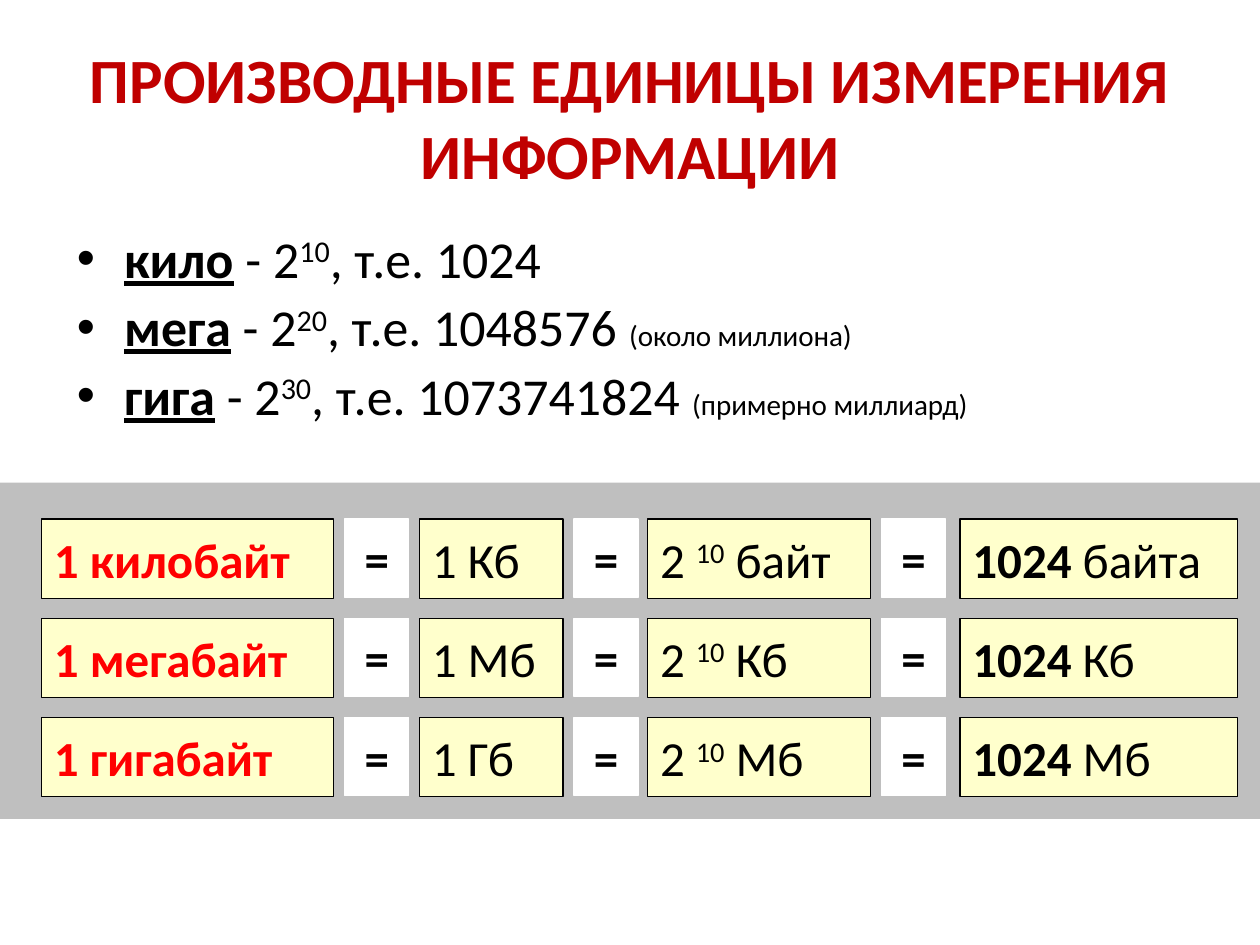
from dataclasses import dataclass

from pptx import Presentation
from pptx.dml.color import RGBColor
from pptx.enum.shapes import MSO_SHAPE
from pptx.enum.text import MSO_ANCHOR as ANCHOR, MSO_AUTO_SIZE as AUTOSIZE, PP_ALIGN as ALIGN
from pptx.util import Inches, Pt

COLS, ROWS = 100, 75


@dataclass(frozen=True)
class Theme:
    font: str = "Calibri"
    heading: str = "C00000"
    ink: str = "000000"
    accent: str = "FF0000"
    band: str = "BFBFBF"
    cell: str = "FFFFCC"
    paper: str = "FFFFFF"
    title_size: float = 36
    body_size: float = 29.6
    note_size: float = 16.6
    cell_size: float = 28
    line: float = 0.75


def add_run(p, text, font, size, color, bold=False, underline=False, raised=False):
    r = p.add_run()
    r.text = text
    r.font.name, r.font.size = font, Pt(size)
    r.font.color.rgb = RGBColor.from_string(color)
    r.font.bold, r.font.underline = bold, underline
    if raised:
        r.font._element.set("baseline", "30000")


class SlideBuilder:
    """Draws on one slide; lengths are columns and rows of a COLS by ROWS grid."""

    def __init__(self, prs, theme):
        self.theme = theme
        self.unit_x, self.unit_y = prs.slide_width / COLS, prs.slide_height / ROWS
        self.slide = prs.slides.add_slide(prs.slide_layouts[1])

    def box(self, x, y, w, h):
        return (round(x * self.unit_x), round(y * self.unit_y),
                round(w * self.unit_x), round(h * self.unit_y))

    def add_runs(self, p, runs, size, color=None):
        """Add (text, format) runs to a paragraph."""
        base = {"font": self.theme.font, "size": size, "color": color or self.theme.ink}
        for text, fmt in runs:
            add_run(p, text, **{**base, **fmt})

    def place(self, sp, *area):
        sp.left, sp.top, sp.width, sp.height = self.box(*area)
        sp.text_frame.auto_size = AUTOSIZE.NONE
        return sp.text_frame

    def title(self, text, *area):
        tf = self.place(self.slide.shapes.title, *area)
        tf.vertical_anchor = ANCHOR.MIDDLE
        p = tf.paragraphs[0]
        p.alignment = ALIGN.CENTER
        self.add_runs(p, [(text, {"bold": True})], self.theme.title_size, self.theme.heading)

    def bullets(self, items, *area):
        tf = self.place(self.slide.placeholders[1], *area)
        for i, runs in enumerate(items):
            p = tf.add_paragraph() if i else tf.paragraphs[0]
            p.line_spacing, p.space_before = 1.1, Pt(0)
            self.add_runs(p, runs, self.theme.body_size)

    def group(self):
        return self.slide.shapes.add_group_shape().shapes

    def rect(self, area, fill, line=None, runs=(), align=ALIGN.LEFT, shapes=None):
        shapes = self.slide.shapes if shapes is None else shapes
        sp = shapes.add_shape(MSO_SHAPE.RECTANGLE, *self.box(*area))
        sp.shadow.inherit = False
        sp.fill.solid()
        sp.fill.fore_color.rgb = RGBColor.from_string(fill)
        if line:
            sp.line.color.rgb = RGBColor.from_string(line)
            sp.line.width = Pt(self.theme.line)
        else:
            sp.line.fill.background()
        if runs:
            tf = sp.text_frame
            tf.word_wrap, tf.vertical_anchor = False, ANCHOR.MIDDLE
            tf.paragraphs[0].alignment = align
            self.add_runs(tf.paragraphs[0], runs, self.theme.cell_size)

    def equation(self, y, terms, columns):
        """One row of boxed terms with an equals sign in each gap."""
        t, shapes = self.theme, self.group()
        for (x, w), runs in zip(columns, terms):
            self.rect((x, y, w, 6.3), t.cell, t.ink, runs, shapes=shapes)
        for x, w in columns[:-1]:
            self.rect((x + w + 0.85, y, 5.1, 6.2), t.paper, t.paper,
                      [("=", {"bold": True})], ALIGN.CENTER, shapes)


PREFIXES = [
    ("кило", "10", "1024", ""),
    ("мега", "20", "1048576 ", "(около миллиона)"),
    ("гига", "30", "1073741824 ", "(примерно миллиард)"),
]
UNITS = [
    ("килобайт", "Кб", "байт", "байта"),
    ("мегабайт", "Мб", "Кб", "Кб"),
    ("гигабайт", "Гб", "Мб", "Мб"),
]
COLUMNS = [(3.3, 23.2), (33.3, 11.4), (51.4, 17.7), (76.2, 22)]
FIRST_ROW, ROW_STEP = 41.2, 7.87


def prefix_runs(name, power, value, note, theme):
    runs = [(name, {"bold": True, "underline": True}), (" - 2", {}),
            (power, {"raised": True}), (f", т.е. {value}", {})]
    return runs + ([(note, {"size": theme.note_size})] if note else [])


def unit_terms(name, short, smaller, counted, theme):
    return [
        [(f"1 {name}", {"bold": True, "color": theme.accent})],
        [(f"1 {short}", {})],
        [("2 ", {}), ("10", {"raised": True}), (f" {smaller}", {})],
        [("1024", {"bold": True}), (f" {counted}", {})],
    ]


def main():
    prs = Presentation()
    prs.slide_width, prs.slide_height = Inches(10), Inches(7.5)
    theme = Theme()
    s = SlideBuilder(prs, theme)
    s.title("ПРОИЗВОДНЫЕ ЕДИНИЦЫ ИЗМЕРЕНИЯ ИНФОРМАЦИИ", 5, 3, 90, 12.5)
    s.bullets([prefix_runs(*row, theme) for row in PREFIXES], 5.1, 17, 90, 18.9)
    s.rect((0, 38.3, COLS, 26.7), theme.band)
    for i, row in enumerate(UNITS):
        s.equation(FIRST_ROW + i * ROW_STEP, unit_terms(*row, theme), COLUMNS)
    prs.save("out.pptx")


if __name__ == "__main__":
    main()
